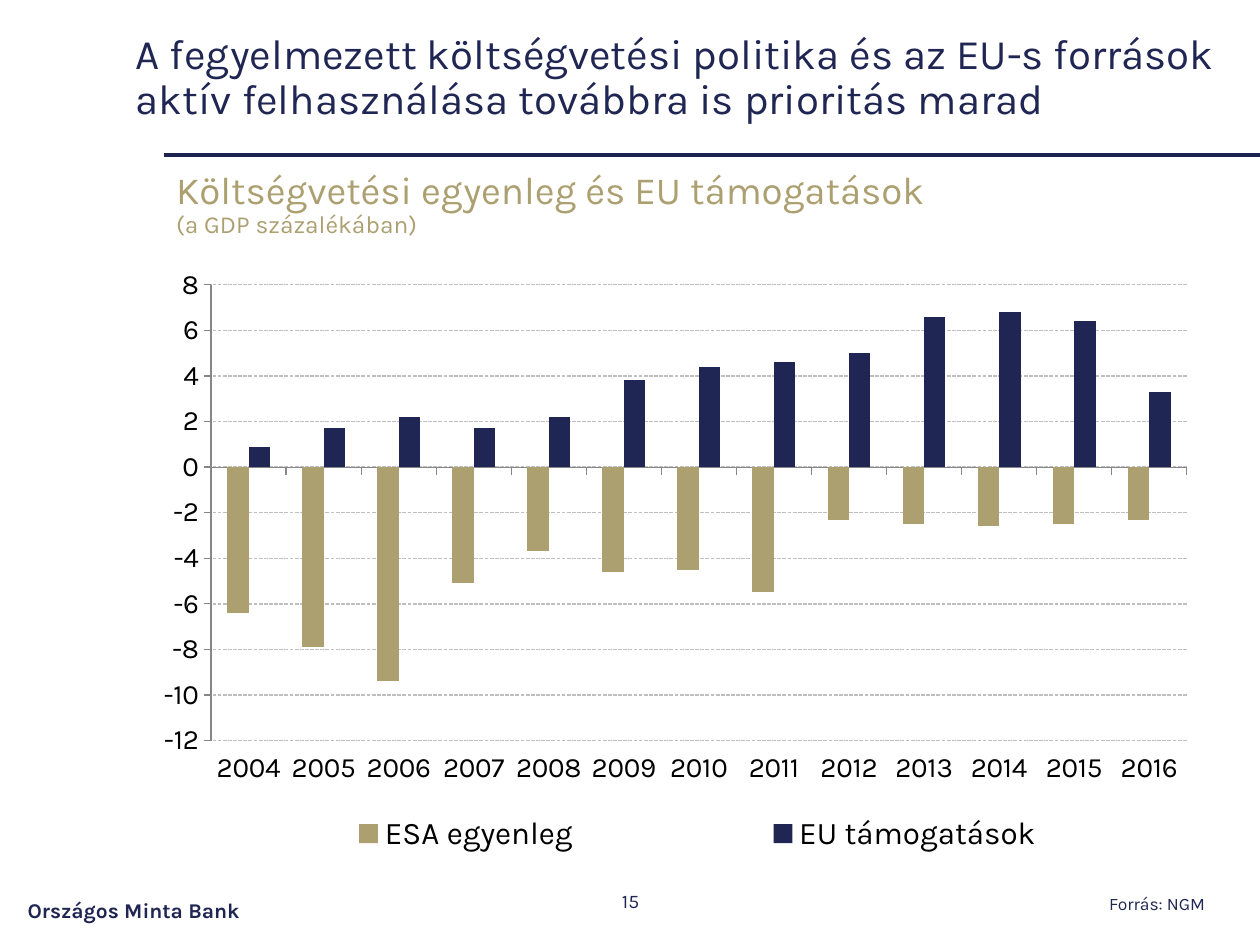
from dataclasses import dataclass

from lxml import etree
from pptx import Presentation
from pptx.chart.data import CategoryChartData
from pptx.dml.color import RGBColor
from pptx.enum.chart import XL_CHART_TYPE, XL_LEGEND_POSITION, XL_TICK_LABEL_POSITION, XL_TICK_MARK
from pptx.enum.dml import MSO_LINE
from pptx.enum.shapes import MSO_CONNECTOR
from pptx.enum.text import MSO_ANCHOR, PP_ALIGN
from pptx.oxml.ns import qn
from pptx.util import Inches, Pt

COLUMN = XL_CHART_TYPE.COLUMN_CLUSTERED
BOTTOM = XL_LEGEND_POSITION.BOTTOM
LOW = XL_TICK_LABEL_POSITION.LOW
OUT, NONE = XL_TICK_MARK.OUTSIDE, XL_TICK_MARK.NONE
DASH = MSO_LINE.SQUARE_DOT
STRAIGHT = MSO_CONNECTOR.STRAIGHT
TOP, MID = MSO_ANCHOR.TOP, MSO_ANCHOR.MIDDLE
LEFT, CENTER, RIGHT = PP_ALIGN.LEFT, PP_ALIGN.CENTER, PP_ALIGN.RIGHT

WIDE, HIGH = 10, 7.5
MARGIN = 0.13 * WIDE  # left edge shared by rule, subtitle and chart


@dataclass(frozen=True)
class Theme:
    font: str = "Karla"
    navy: str = "202653"
    rule: str = "1E2452"
    gold: str = "AC9F70"
    black: str = "000000"
    grid: str = "BFBFBF"
    axis: str = "868686"
    title: int = 24
    head: int = 22
    unit: int = 14
    chart: int = 16
    key: int = 18
    brand: int = 12
    page: int = 11
    source: int = 10


THEME = Theme()

YEARS = [str(year) for year in range(2004, 2017)]
SERIES = [
    ("ESA egyenleg", THEME.gold,
     (-6.4, -7.9, -9.4, -5.1, -3.7, -4.6, -4.5, -5.5, -2.3, -2.5, -2.6, -2.5, -2.3)),
    ("EU támogatások", THEME.navy,
     (0.9, 1.7, 2.2, 1.7, 2.2, 3.8, 4.4, 4.6, 5, 6.6, 6.8, 6.4, 3.3)),
]


def rgb(code):
    return RGBColor.from_string(code)


def style(font, size, color, bold=False):
    font.name = THEME.font
    font.size = Pt(size)
    font.bold = bold
    font.color.rgb = rgb(color)


def add_text(slide, box, text, size, color, align=LEFT, anchor=MID, bold=False, space=1.0):
    shape = slide.shapes.add_textbox(*map(Inches, box))
    frame = shape.text_frame
    frame.word_wrap = True
    frame.vertical_anchor = anchor
    para = frame.paragraphs[0]
    para.text = text
    para.alignment = align
    para.line_spacing = space
    style(para.font, size, color, bold)
    return para


def add_rule(slide, left, right, top):
    line = slide.shapes.add_connector(STRAIGHT, *map(Inches, (left, top, right, top)))
    line.line.color.rgb = rgb(THEME.rule)
    line.line.width = Pt(2.25)
    etree.SubElement(line._element.spPr, qn("a:effectLst"))


def place(parent, box, inner=False):
    """Give a chart part a fixed place, in shares of the chart."""
    for old in parent.findall(qn("c:layout")):
        parent.remove(old)
    layout = etree.Element(qn("c:layout"))
    manual = etree.SubElement(layout, qn("c:manualLayout"))
    parts = [("layoutTarget", "inner")] if inner else []
    parts += [("xMode", "edge"), ("yMode", "edge"), *zip("xywh", box)]
    for name, value in parts:
        etree.SubElement(manual, qn(f"c:{name}")).set("val", str(value))
    return layout


def set_axes(chart):
    years, values = chart.category_axis, chart.value_axis
    for axis in (years, values):
        axis.major_tick_mark = OUT
        axis.minor_tick_mark = NONE
        axis.format.line.color.rgb = rgb(THEME.axis)
        axis.format.line.width = Pt(0.75)
    years.tick_label_position = LOW
    values.minimum_scale, values.maximum_scale, values.major_unit = -12, 8, 2
    values.tick_labels.number_format = "0"
    values.tick_labels.number_format_is_linked = False
    grid = values.major_gridlines.format.line
    grid.color.rgb = rgb(THEME.grid)
    grid.width = Pt(0.75)
    grid.dash_style = DASH


def set_key(chart):
    chart.has_legend = True
    key = chart.legend
    key.position = BOTTOM
    key.include_in_layout = False
    style(key.font, THEME.key, THEME.black)
    node = key._element
    node.find(qn("c:legendPos")).addnext(place(node, (0, 0.91, 1, 0.09)))


def add_bars(slide, box):
    data = CategoryChartData()
    data.categories = YEARS
    for name, _, values in SERIES:
        data.add_series(name, values)
    chart = slide.shapes.add_chart(COLUMN, *map(Inches, box), data).chart
    style(chart.font, THEME.chart, THEME.black)
    chart.has_title = False
    plot = chart.plots[0]
    plot.gap_width, plot.overlap = 150, 0
    plot.vary_by_categories = False
    for bars, (_, color, _) in zip(plot.series, SERIES):
        bars.invert_if_negative = False
        bars.format.fill.solid()
        bars.format.fill.fore_color.rgb = rgb(color)
    set_axes(chart)
    set_key(chart)
    area = chart._chartSpace.chart.plotArea
    area.insert(0, place(area, (0.04, 0.034, 0.923, 0.765), inner=True))


def main():
    deck = Presentation()
    deck.slide_width, deck.slide_height = Inches(WIDE), Inches(HIGH)
    slide = deck.slides.add_slide(deck.slide_layouts[6])

    # Heading and rule
    add_rule(slide, MARGIN, WIDE, 1.23)
    add_text(slide, (0.98, 0.21, 9.25, 0.83),
             "A fegyelmezett költségvetési politika és az EU-s források "
             "aktív felhasználása továbbra is prioritás marad",
             THEME.title, THEME.navy, space=0.9)

    # Chart heading with its unit in smaller type
    head = add_text(slide, (MARGIN, 1.31, 8.5, 0.71),
                    "Költségvetési egyenleg és EU támogatások\v(a GDP százalékában)",
                    THEME.head, THEME.gold, anchor=TOP, space=0.9)
    head.runs[-1].font.size = Pt(THEME.unit)

    # Chart
    add_bars(slide, (MARGIN, 2.1, 8.43, 4.73))

    # Footer
    add_text(slide, (3.88, 6.95, 2.25, 0.4), "15", THEME.page, THEME.navy, CENTER)
    add_text(slide, (7.05, 6.98, 2.61, 0.4), "Forrás: NGM",
             THEME.source, THEME.navy, RIGHT, space=0.9)
    add_text(slide, (0.12, 7.06, 3.38, 0.32), "Országos Minta Bank",
             THEME.brand, THEME.navy, bold=True)

    deck.save("out.pptx")


if __name__ == "__main__":
    main()
